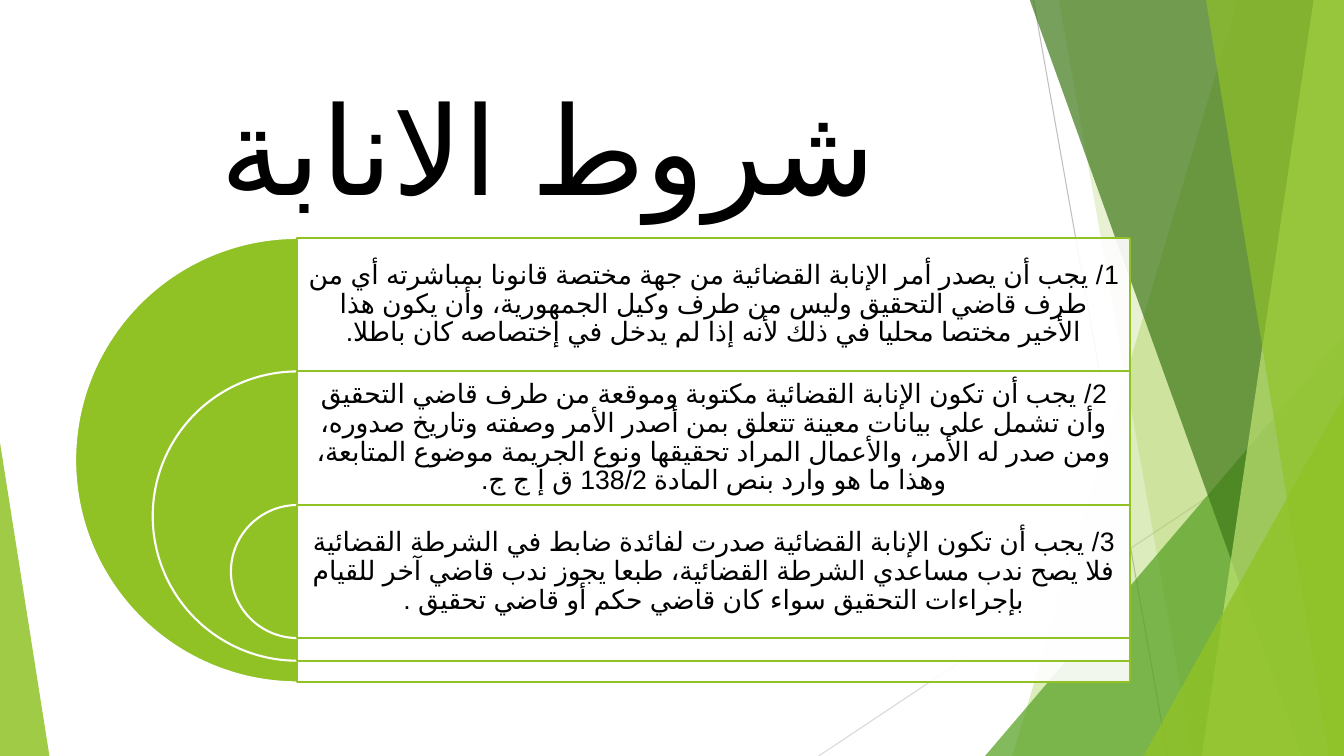
from lxml import etree
from pptx import Presentation
from pptx.dml.color import RGBColor
from pptx.enum.lang import MSO_LANGUAGE_ID
from pptx.enum.shapes import MSO_CONNECTOR, MSO_SHAPE
from pptx.enum.text import MSO_ANCHOR, PP_ALIGN
from pptx.oxml.ns import qn
from pptx.util import Inches, Pt

STRAIGHT = MSO_CONNECTOR.STRAIGHT
PIE, RECT, TRIANGLE = MSO_SHAPE.PIE, MSO_SHAPE.RECTANGLE, MSO_SHAPE.ISOSCELES_TRIANGLE
CENTER = PP_ALIGN.CENTER
TOP, MIDDLE = MSO_ANCHOR.TOP, MSO_ANCHOR.MIDDLE
ARABIC = MSO_LANGUAGE_ID.ARABIC_ALGERIA

WIDTH, HEIGHT = 13.33, 7.5
EDGE_TOP = -0.01
GREEN, WHITE, BLACK = "90C226", "FFFFFF", "000000"

# Background bands: top x, bottom x, colour, opacity
BACK_BANDS = [(12.28, 10.04, GREEN, 30), (10.5, 11.83, GREEN, 20)]
FRONT_BANDS = [
    (10.21, 12.91, "3F7819", 70),
    (13.03, 11.92, "C0E474", 70),
    (11.96, 13.18, GREEN, 65),
]

TITLE = "شروط الانابة"
CONDITIONS = [
    "1/ يجب أن يصدر أمر الإنابة القضائية من جهة مختصة قانونا بمباشرته أي من طرف قاضي التحقيق وليس من طرف وكيل الجمهورية، وأن يكون هذا الأخير مختصا محليا في ذلك لأنه إذا لم يدخل في إختصاصه كان باطلا.",
    "2/ يجب أن تكون الإنابة القضائية مكتوبة وموقعة من طرف قاضي التحقيق وأن تشمل على بيانات معينة تتعلق بمن أصدر الأمر وصفته وتاريخ صدوره، ومن صدر له الأمر، والأعمال المراد تحقيقها ونوع الجريمة موضوع المتابعة، وهذا ما هو وارد بنص المادة 138/2 ق إ ج ج.",
    "3/ يجب أن تكون الإنابة القضائية صدرت لفائدة ضابط في الشرطة القضائية فلا يصح ندب مساعدي الشرطة القضائية، طبعا يجوز ندب قاضي آخر للقيام بإجراءات التحقيق سواء كان قاضي حكم أو قاضي تحقيق .",
]

# Nested half discs share one centre line and one row height
ROW_LEFT, ROW_TOP, ROW_WIDTH, ROW_HEIGHT = 2.95, 2.36, 8.26, 1.325
DIAMETERS = [4.41, 2.87, 1.32]


def rgb(color):
    return RGBColor.from_string(color)


def paint(s, color, opacity=100, line=None):
    """Fill a shape, with optional transparency and outline."""
    s.shadow.inherit = False
    s.fill.solid()
    s.fill.fore_color.rgb = rgb(color)
    if opacity < 100:
        fill = s._element.spPr.find(qn("a:solidFill"))
        etree.SubElement(fill[0], qn("a:alpha")).set("val", str(opacity * 1000))
    if line:
        s.line.color.rgb = rgb(line)
        s.line.width = Pt(1.5)
    else:
        s.line.fill.background()


def add_preset(shapes, kind, box, adjustments, color, opacity=100, line=None):
    s = shapes.add_shape(kind, *map(Inches, box))
    for i, value in enumerate(adjustments):
        s.adjustments[i] = value
    paint(s, color, opacity, line)


def add_band(shapes, top_x, bottom_x, color, opacity):
    """Slanted band that runs to the right edge of the slide."""
    builder = shapes.build_freeform(Inches(top_x), Inches(EDGE_TOP))
    corners = [(WIDTH, EDGE_TOP), (WIDTH, HEIGHT), (bottom_x, HEIGHT)]
    builder.add_line_segments([(Inches(x), Inches(y)) for x, y in corners])
    paint(builder.convert_to_shape(), color, opacity)


def add_line(shapes, start, end, color):
    s = shapes.add_connector(STRAIGHT, *map(Inches, start + end))
    s.line.color.rgb = rgb(color)
    s.line.width = Pt(0.75)
    etree.SubElement(s._element.spPr, qn("a:effectLst"))


def add_text(shapes, box, text, size, font, anchor, margins, spacing=None):
    """Centred right-to-left Arabic text."""
    tf = shapes.add_textbox(*map(Inches, box)).text_frame
    side, edge = map(Inches, margins)
    frame = {"word_wrap": True, "vertical_anchor": anchor,
             "margin_left": side, "margin_right": side,
             "margin_top": edge, "margin_bottom": edge}
    for name, value in frame.items():
        setattr(tf, name, value)
    p = tf.paragraphs[0]
    p.alignment = CENTER
    p.line_spacing = spacing
    p._p.get_or_add_pPr().set("rtl", "1")
    r = p.add_run()
    r.text = text
    style = {"size": Pt(size), "name": font, "language_id": ARABIC}
    for name, value in style.items():
        setattr(r.font, name, value)
    r.font.color.rgb = rgb(BLACK)
    etree.SubElement(r._r.get_or_add_rPr(), qn("a:cs")).set("typeface", "Arial")


def add_background(shapes):
    add_line(shapes, (10.25, 0), (11.58, HEIGHT), "BFBFBF")
    add_line(shapes, (WIDTH, 4.03), (8.12, HEIGHT), "D9D9D9")
    for band in BACK_BANDS:
        add_band(shapes, *band)
    add_preset(shapes, TRIANGLE, (9.77, 3.33, 3.56, 4.17), [1], "54A021", 72)
    for band in FRONT_BANDS:
        add_band(shapes, *band)
    add_preset(shapes, TRIANGLE, (11.34, 3.93, 1.99, 3.57), [1], GREEN, 80)
    add_preset(shapes, TRIANGLE, (0, 4.39, 0.49, 3.11), [0], GREEN, 85)


def add_condition(shapes, index, diameter, text):
    """Half disc, its panel and the text in the panel's first row."""
    top = ROW_TOP + index * ROW_HEIGHT
    disc = (ROW_LEFT - diameter / 2, top, diameter, diameter)
    add_preset(shapes, PIE, disc, [54, 162], GREEN, line=WHITE)
    panel = (ROW_LEFT, top, ROW_WIDTH, diameter)
    add_preset(shapes, RECT, panel, [], WHITE, 90, GREEN)
    row = (ROW_LEFT, top, ROW_WIDTH, ROW_HEIGHT)
    add_text(shapes, row, text, 19, "Karla", MIDDLE, (0.08, 0.08), 0.9)


def main():
    prs = Presentation()
    prs.slide_width, prs.slide_height = Inches(WIDTH), Inches(HEIGHT)
    shapes = prs.slides.add_slide(prs.slide_layouts[6]).shapes

    add_background(shapes)
    add_text(shapes, (0.74, 0.67, 9.4, 1.44), TITLE, 88, "Arial", TOP, (0.1, 0.05))
    for i, (diameter, text) in enumerate(zip(DIAMETERS, CONDITIONS)):
        add_condition(shapes, i, diameter, text)

    prs.save("out.pptx")


if __name__ == "__main__":
    main()
